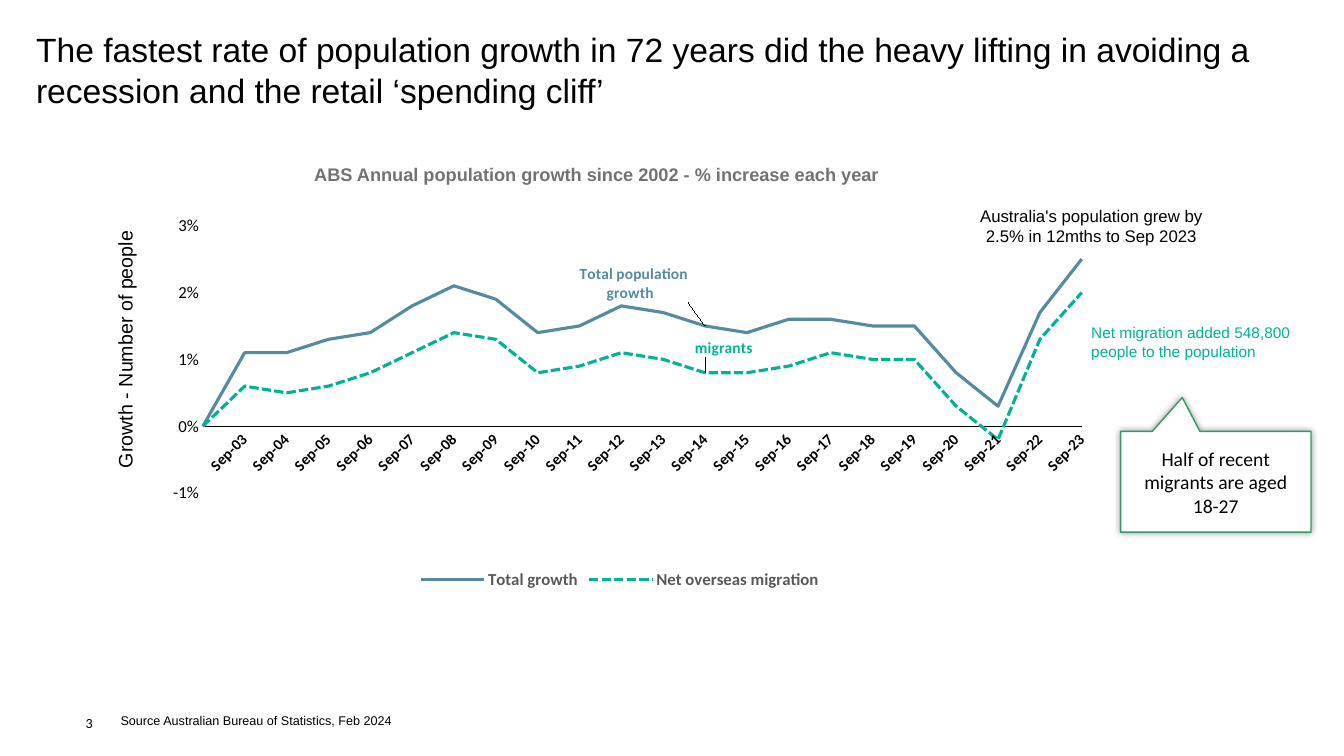
from lxml import etree
from pptx import Presentation
from pptx.chart import data as chart_data
from pptx.dml.color import RGBColor
from pptx.enum import chart as ch, dml, shapes, text
from pptx.oxml import parse_xml
from pptx.oxml.ns import nsdecls, qn
from pptx.util import Cm, Pt

COLORS = {
    "ink": "000000",
    "heading": "767171",
    "legend": "595959",
    "total": "568A9D",
    "migration": "00B398",
    "callout": "339966",
    "paper": "FFFFFF",
}
CATEGORIES = [" "] + [f"Sep-{year:02d}" for year in range(3, 24)]
TOTAL_GROWTH = [0, 0.011, 0.011, 0.013, 0.014, 0.018, 0.021, 0.019, 0.014, 0.015, 0.018,
                0.017, 0.015, 0.014, 0.016, 0.016, 0.015, 0.015, 0.008, 0.003, 0.017, 0.025]
NET_MIGRATION = [0, 0.006, 0.005, 0.006, 0.008, 0.011, 0.014, 0.013, 0.008, 0.009, 0.011,
                 0.01, 0.008, 0.008, 0.009, 0.011, 0.01, 0.01, 0.003, -0.002, 0.013, 0.02]
LABELLED_POINT = CATEGORIES.index("Sep-14")


def rgb(name):
    return RGBColor.from_string(COLORS[name])


def style(font, size, color="ink", face="Arial", bold=False):
    font.size, font.name, font.bold = Pt(size), face, bold
    font.color.rgb = rgb(color)


def add_text(slide, box, lines, size, align=text.PP_ALIGN.LEFT, **look):
    label = slide.shapes.add_textbox(*map(Cm, box))
    frame = label.text_frame
    frame.word_wrap = True
    frame.text = lines
    for paragraph in frame.paragraphs:
        paragraph.alignment = align
        for run in paragraph.runs:
            style(run.font, size, **look)
    return label


def manual_layout(x, y, size=None):
    """Chart layout: an offset, or an inner plot area when a size is given."""
    layout = etree.Element(qn("c:layout"))
    manual = etree.SubElement(layout, qn("c:manualLayout"))
    values = {"x": x, "y": y}
    if size:
        values = {"layoutTarget": "inner", "xMode": "edge", "yMode": "edge",
                  **values, "w": size[0], "h": size[1]}
    for tag, value in values.items():
        etree.SubElement(manual, qn(f"c:{tag}")).set("val", str(value))
    return layout


def style_series(series, color, label_text, offset):
    series.smooth = False
    series.marker.style = ch.XL_MARKER_STYLE.NONE
    series.format.line.width = Pt(2.25)
    series.format.line.color.rgb = rgb(color)

    # Named point with a leader line
    series.data_labels.show_value = False
    label = series.points[LABELLED_POINT].data_label
    label.text_frame.text = label_text
    style(label.text_frame.paragraphs[0].runs[0].font, 11, color, "Calibri", True)
    label.position = ch.XL_LABEL_POSITION.ABOVE
    labels = series.data_labels._element
    labels.find(qn("c:dLbl")).insert(1, manual_layout(*offset))
    labels.append(parse_xml(
        f'<c:extLst {nsdecls("c", "a")}><c:ext uri="{{CE6537A1-D6FC-4f65-9D91-7224C49458BB}}" '
        'xmlns:c15="http://schemas.microsoft.com/office/drawing/2012/chart">'
        '<c15:showLeaderLines val="1"/><c15:leaderLines><c:spPr><a:ln w="9525"><a:solidFill>'
        f'<a:srgbClr val="{COLORS["ink"]}"/></a:solidFill></a:ln></c:spPr></c15:leaderLines>'
        '</c:ext></c:extLst>'))


def add_growth_chart(slide, box):
    figures = chart_data.CategoryChartData(number_format="0%")
    figures.categories = CATEGORIES
    figures.add_series("Total growth", TOTAL_GROWTH)
    figures.add_series("Net overseas migration", NET_MIGRATION)
    chart = slide.shapes.add_chart(ch.XL_CHART_TYPE.LINE, *map(Cm, box), figures).chart
    style(chart.font, 10, face="Calibri")
    chart.has_title = False
    chart.plots[0].vary_by_categories = False
    chart._chartSpace.chart.plotArea.insert(0, manual_layout(0.083, 0.044, (0.879, 0.695)))
    for old in chart._chartSpace.chart.plotArea.findall(qn("c:layout"))[1:]:
        old.getparent().remove(old)

    # Legend
    chart.has_legend = True
    chart.legend.position = ch.XL_LEGEND_POSITION.BOTTOM
    chart.legend.include_in_layout = False
    style(chart.legend.font, 12, "legend", "Calibri", True)

    # Axes
    years, growth = chart.category_axis, chart.value_axis
    for axis in (years, growth):
        axis.major_tick_mark = axis.minor_tick_mark = ch.XL_TICK_MARK.NONE
        axis.has_major_gridlines = False
    style(years.tick_labels.font, 11, face="Calibri", bold=True)
    years._element.find(qn("c:txPr")).find(qn("a:bodyPr")).set("rot", "-2700000")
    years.format.line.color.rgb = rgb("ink")
    years.format.line.width = Pt(0.75)
    style(growth.tick_labels.font, 12, face="Calibri")
    growth.tick_labels.number_format = "0%"
    growth.tick_labels.number_format_is_linked = False
    growth.format.line.fill.background()
    growth.minimum_scale, growth.maximum_scale, growth.major_unit = -0.01, 0.03, 0.01
    cross = growth._element.find(qn("c:crossBetween"))
    if cross is None:
        cross = etree.Element(qn("c:crossBetween"))
        growth._element.find(qn("c:majorUnit")).addprevious(cross)
    cross.set("val", "midCat")

    # Lines
    total, migration = chart.plots[0].series
    style_series(total, "total", " Total population growth ", (-0.073, -0.05))
    style_series(migration, "migration", " migrants", (0.017, -0.03))
    migration.format.line.dash_style = dml.MSO_LINE.SQUARE_DOT


def add_chart_region(slide, box):
    left, top, width, height = box
    add_text(slide, (left + 4.65, top - 1.27, 21.06, 0.81),
             "ABS Annual population growth since 2002 - % increase each year",
             13, color="heading", bold=True)
    axis_title = add_text(slide, (left - 2.78, top + 2.54, 7.11, 2.01),
                          "Growth - Number of people", 14, text.PP_ALIGN.CENTER)
    axis_title.rotation = 270
    axis_title.text_frame.paragraphs[0].line_spacing = 0.9
    add_growth_chart(slide, box)

    # Notes beside the line ends
    add_text(slide, (left + width - 4.27, top - 0.2, 7.11, 1.8),
             "Australia's population grew by 2.5% in 12mths to Sep 2023",
             12, text.PP_ALIGN.CENTER)
    add_text(slide, (left + width - 0.97, top + 2.77, 6.6, 1.19),
             "Net migration added 548,800\npeople to the population", 11, color="migration")


def add_age_callout(slide, box):
    callout = slide.shapes.add_shape(shapes.MSO_SHAPE.RECTANGULAR_CALLOUT, *map(Cm, box))
    callout.adjustments[0], callout.adjustments[1] = -0.176, -0.835
    callout.fill.solid()
    callout.fill.fore_color.rgb = rgb("paper")
    callout.line.color.rgb = rgb("callout")
    callout.line.width = Pt(1)
    callout.shadow.inherit = False
    glow = etree.SubElement(callout._element.spPr.find(qn("a:effectLst")), qn("a:outerShdw"),
                            blurRad=str(Pt(5)), dist="0", dir="0", algn="ctr", rotWithShape="0")
    shade = etree.SubElement(glow, qn("a:srgbClr"), val=COLORS["ink"])
    etree.SubElement(shade, qn("a:alpha"), val="40000")
    frame = callout.text_frame
    frame.word_wrap = True
    frame.vertical_anchor = text.MSO_ANCHOR.MIDDLE
    frame.text = "Half of recent migrants are aged 18-27"
    frame.paragraphs[0].alignment = text.PP_ALIGN.CENTER
    style(frame.paragraphs[0].runs[0].font, 14, face="Calibri")


def add_footer(slide, box):
    left, top, width, height = box
    number = add_text(slide, (left, top, 0.6, height), "3", 10, face="Calibri").text_frame
    number.margin_left = number.margin_right = number.margin_top = number.margin_bottom = 0
    number.vertical_anchor = text.MSO_ANCHOR.BOTTOM
    add_text(slide, (left + 0.63, top + 0.43, width - 0.63, 0.64),
             "Source Australian Bureau of Statistics, Feb 2024", 9)


def main():
    deck = Presentation()
    deck.slide_width, deck.slide_height = Cm(33.87), Cm(19.05)
    slide = deck.slides.add_slide(deck.slide_layouts[6])
    add_text(slide, (0.66, 0.61, 31.32, 2.31),
             "The fastest rate of population growth in 72 years did the heavy lifting "
             "in avoiding a recession and the retail ‘spending cliff’", 24)
    add_chart_region(slide, (3.02, 5.26, 25.2, 9.7))
    add_age_callout(slide, (28.24, 10.87, 4.8, 2.54))
    add_footer(slide, (2.16, 17.42, 26.77, 1.02))
    deck.save("out.pptx")


if __name__ == "__main__":
    main()
